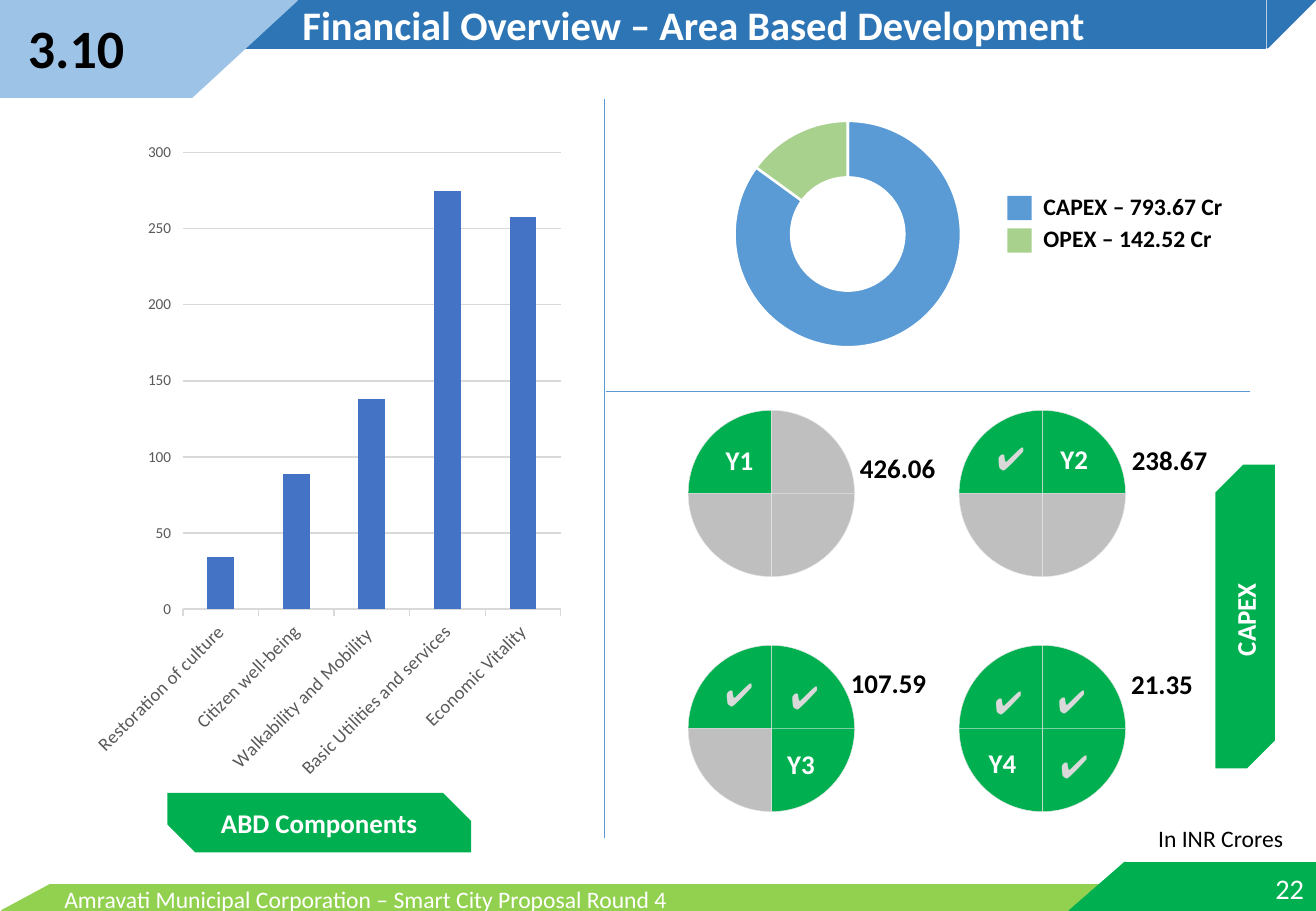
from dataclasses import dataclass

from lxml.etree import SubElement
from pptx import Presentation
from pptx.chart.data import CategoryChartData
from pptx.dml.color import RGBColor
from pptx.enum.chart import XL_CHART_TYPE as Chart, XL_TICK_MARK as Tick
from pptx.enum.shapes import MSO_CONNECTOR as Connector, MSO_SHAPE as Shape
from pptx.enum.text import MSO_ANCHOR as Anchor, PP_ALIGN as Align
from pptx.oxml.ns import qn
from pptx.util import Pt


@dataclass(frozen=True)
class Theme:
    font: str = "Calibri"
    check_font: str = "Arial"
    white: str = "FFFFFF"
    black: str = "000000"
    band: str = "2E75B6"
    badge: str = "9DC3E6"
    lime: str = "92D050"
    green: str = "00B050"
    blue: str = "5B9BD5"
    pale_green: str = "A9D18E"
    bar: str = "4472C4"
    grey: str = "BFBFBF"
    edge: str = "E7E6E6"
    grid: str = "D9D9D9"
    axis_text: str = "595959"
    number_size: float = 32
    title_size: float = 24
    check_size: float = 18.9
    page_size: float = 16.8
    label_size: float = 16
    body_size: float = 14
    category_size: float = 11
    value_size: float = 9


theme = Theme()
WIDTH, HEIGHT = 780, 540

TITLE = "Financial Overview – Area Based Development"
SECTION = "3.10"
FOOTER = "Amravati Municipal Corporation – Smart City Proposal Round 4"
PAGE = "22"
UNIT = "In INR Crores"

# Colour, body box, body rotation, slanted end box, end rotation
BANDS = [
    (theme.band, (36, 0, 714.2, 28.5), 0, (751.2, 0, 28.3, 28.3), 90),
    (theme.badge, (0, 0, 113.3, 57.6), 0, (116, -2.3, 57.6, 62.5), 90),
    (theme.lime, (29.5, 524.2, 714.2, 15.8), 180, (7.7, 518, 15.3, 28.4), 270),
    (theme.green, (667.4, 511.2, 112.6, 28.8), 180, (635.9, 509.1, 28.8, 33), 270),
]
COMPONENTS = {
    "Restoration of culture": 34,
    "Citizen well-being": 89,
    "Walkability and Mobility ": 138,
    "Basic Utilities and services": 275,
    "Economic Vitality": 258,
}
# Legend text, share, colour
SPENDING = [
    ("CAPEX – 793.67 Cr", 85, theme.blue),
    ("OPEX – 142.52 Cr", 15, theme.pale_green),
]
# Year, its place, amount, its place, places of the checks for earlier years
YEARS = [
    ("Y1", (423, 259.2), "426.06", (502.6, 264.2), []),
    ("Y2", (621.4, 258.9), "238.67", (663.8, 259.6), [(583.9, 256.3)]),
    ("Y3", (459.4, 439.5), "107.59", (497.2, 391.3), [(422.8, 396.2), (461.7, 398.2)]),
    ("Y4", (578.9, 438.8), "21.35", (663.4, 392.4),
     [(582.5, 401), (619.9, 400.3), (621.4, 439.2)]),
]
PIE_LEFT, PIE_TOP, PIE_STEP_X, PIE_STEP_Y, RADIUS = 457.2, 292.5, 160.6, 139.3, 49.3
CURVE = 0.5523  # handle length of a quarter circle, as a share of its radius
TURNS = [(-1, 0), (0, -1), (1, 0), (0, 1)]  # clockwise from the left
# Text, box, rotation
TAGS = [
    ("CAPEX ", (648, 347.8, 180, 35.3), 270),
    ("ABD Components", (99.2, 470, 180, 35.3), 0),
]
DIVIDERS = [(358.3, 58.5, 358.3, 496.8), (740.9, 231.8, 359.3, 231.8)]


def rgb(colour):
    return RGBColor.from_string(colour)


def points(values):
    return [Pt(value) for value in values]


def write(frame, *lines, size=theme.label_size, colour=theme.black, bold=False,
          font=theme.font, align=Align.LEFT, anchor=Anchor.TOP, wrap=True,
          spacing=None, gap=0):
    """Fill a text frame, one paragraph per line, with gap points between them."""
    frame.word_wrap = wrap
    frame.vertical_anchor = anchor
    for index, line in enumerate(lines):
        paragraph = frame.add_paragraph() if index else frame.paragraphs[0]
        paragraph.alignment = align
        paragraph.line_spacing = spacing
        paragraph.space_before = Pt(gap if index else 0)
        run = paragraph.add_run()
        run.text = line
        run.font.size, run.font.bold, run.font.name = Pt(size), bold, font
        run.font.color.rgb = rgb(colour)


def label(box, *lines, **style):
    write(slide.shapes.add_textbox(*points(box)).text_frame, *lines, **style)


def paint(shape, colour, edge=None, width=0.25):
    shape.shadow.inherit = False
    shape.fill.solid()
    shape.fill.fore_color.rgb = rgb(colour)
    if edge:
        shape.line.color.rgb = rgb(edge)
        shape.line.width = Pt(width)
    else:
        shape.line.fill.background()


def add_preset(kind, box, colour, rotation=0, adjustments=(), **line):
    shape = slide.shapes.add_shape(kind, *points(box))
    for index, value in enumerate(adjustments):
        shape.adjustments[index] = value
    shape.rotation = rotation
    paint(shape, colour, **line)
    return shape


def quadrant(x, y, number, colour):
    """Draw a quarter disc; numbers run clockwise from the top left."""
    start, end = [(Pt(x + RADIUS * across), Pt(y + RADIUS * down))
                  for across, down in (TURNS[number], TURNS[(number + 1) % 4])]
    builder = slide.shapes.build_freeform(*start, scale=1)
    builder.add_line_segments([end, (Pt(x), Pt(y))], close=True)
    shape = builder.convert_to_shape()
    paint(shape, colour, theme.edge)

    # Bend the outer side: python-pptx draws straight segments only.
    first, last, centre = [(int(spot.get("x")), int(spot.get("y")))
                           for spot in shape.element.xpath(".//a:pt")[:3]]
    handles = [[near + CURVE * (far - middle)
                for near, far, middle in zip(origin, other, centre)]
               for origin, other in ((first, last), (last, first))]
    side = shape.element.xpath(".//a:lnTo")[0]
    curve = side.makeelement(qn("a:cubicBezTo"))
    for across, down in (*handles, last):
        SubElement(curve, qn("a:pt"), x=str(round(across)), y=str(round(down)))
    side.getparent().replace(side, curve)


def add_chart(kind, box, categories, values):
    data = CategoryChartData()
    data.categories = categories
    data.add_series("Series 1", values)
    chart = slide.shapes.add_chart(kind, *points(box), data).chart
    chart.has_title = chart.has_legend = False
    chart.font.name = theme.font
    return chart


def component_chart():
    chart = add_chart(Chart.COLUMN_CLUSTERED, (49.4, 77.5, 288.7, 392.4),
                      COMPONENTS.keys(), COMPONENTS.values())
    plot = chart.plots[0]
    plot.gap_width, plot.vary_by_categories = 182, False
    fill = plot.series[0].format.fill
    fill.solid()
    fill.fore_color.rgb = rgb(theme.bar)
    category, value = chart.category_axis, chart.value_axis
    for axis, size in ((category, theme.category_size), (value, theme.value_size)):
        axis.major_tick_mark = Tick.OUTSIDE
        font = axis.tick_labels.font
        font.size, font.name = Pt(size), theme.font
        font.color.rgb = rgb(theme.axis_text)
    value.minimum_scale, value.maximum_scale, value.major_unit = 0, 300, 50
    value.format.line.fill.background()
    for line in (category.format.line, value.major_gridlines.format.line):
        line.color.rgb = rgb(theme.grid)
        line.width = Pt(0.75)
    chart.element.xpath("//c:catAx/c:txPr/a:bodyPr")[0].set("rot", "-2700000")


def spending_chart():
    texts, shares, colours = zip(*SPENDING)
    chart = add_chart(Chart.DOUGHNUT, (375.8, 61.7, 253.4, 154.1), ["1", "2"], shares)
    for index, colour in enumerate(colours):
        part = chart.plots[0].series[0].points[index].format
        part.fill.solid()
        part.fill.fore_color.rgb = rgb(colour)
        part.line.color.rgb = rgb(theme.white)
        part.line.width = Pt(1.5)
        add_preset(Shape.RECTANGLE, (597.1, 116.1 + 19.3 * index, 14.4, 14.4), colour)
    label((611.4, 110.2, 184.3, 43.9), *texts, size=theme.body_size, bold=True, gap=2.4)


def year_pies():
    for index, (year, place, amount, amount_place, checks) in enumerate(YEARS):
        row, column = divmod(index, 2)
        x, y = PIE_LEFT + column * PIE_STEP_X, PIE_TOP + row * PIE_STEP_Y
        for number in range(4):
            quadrant(x, y, number, theme.green if number <= index else theme.grey)
        label((*place, 42.5, 26.6), year, colour=theme.white, bold=True)
        label((*amount_place, 77, 26.6), amount, bold=True)
        for check in checks:
            label((*check, 29.5, 30.2), "✔", size=theme.check_size, colour=theme.grid,
                  font=theme.check_font, wrap=False)


presentation = Presentation()
presentation.slide_width, presentation.slide_height = Pt(WIDTH), Pt(HEIGHT)
slide = presentation.slides.add_slide(presentation.slide_layouts[5])

for colour, body, turn, slant, slant_turn in BANDS:
    add_preset(Shape.RECTANGLE, body, colour, turn, edge=colour, width=1)
    add_preset(Shape.ISOSCELES_TRIANGLE, slant, colour, slant_turn, [0], edge=colour, width=1)
title = slide.shapes.title
title.left, title.top, title.width, title.height = points((172.1, -0.4, 532, 26))
slide.shapes.element.append(title.element)
write(title.text_frame, TITLE, size=theme.title_size, colour=theme.white, bold=True,
      spacing=0.9)
label((9.4, 9.4, 103.7, 29.5), SECTION, size=theme.number_size, bold=True, spacing=0.9)
label((667.4, 512.2, 112.6, 28.1), PAGE, size=theme.page_size, colour=theme.white,
      align=Align.RIGHT, anchor=Anchor.MIDDLE)
label((31, 522, 543.6, 22.3), FOOTER, size=theme.body_size, colour=theme.white,
      anchor=Anchor.MIDDLE)
label((631.4, 484.6, 184.3, 24.5), UNIT, size=theme.body_size, align=Align.CENTER)

component_chart()
spending_chart()
year_pies()

for text, box, rotation in TAGS:
    tag = add_preset(Shape.SNIP_2_DIAG_RECTANGLE, box, theme.green, rotation, [0, 0.469])
    write(tag.text_frame, text, colour=theme.white, bold=True, align=Align.CENTER,
          anchor=Anchor.MIDDLE)

for ends in DIVIDERS:
    divider = slide.shapes.add_connector(Connector.STRAIGHT, *points(ends))
    divider.line.color.rgb = rgb(theme.blue)
    divider.line.width = Pt(0.5)
    SubElement(divider.element.spPr, qn("a:effectLst"))

presentation.save("out.pptx")
